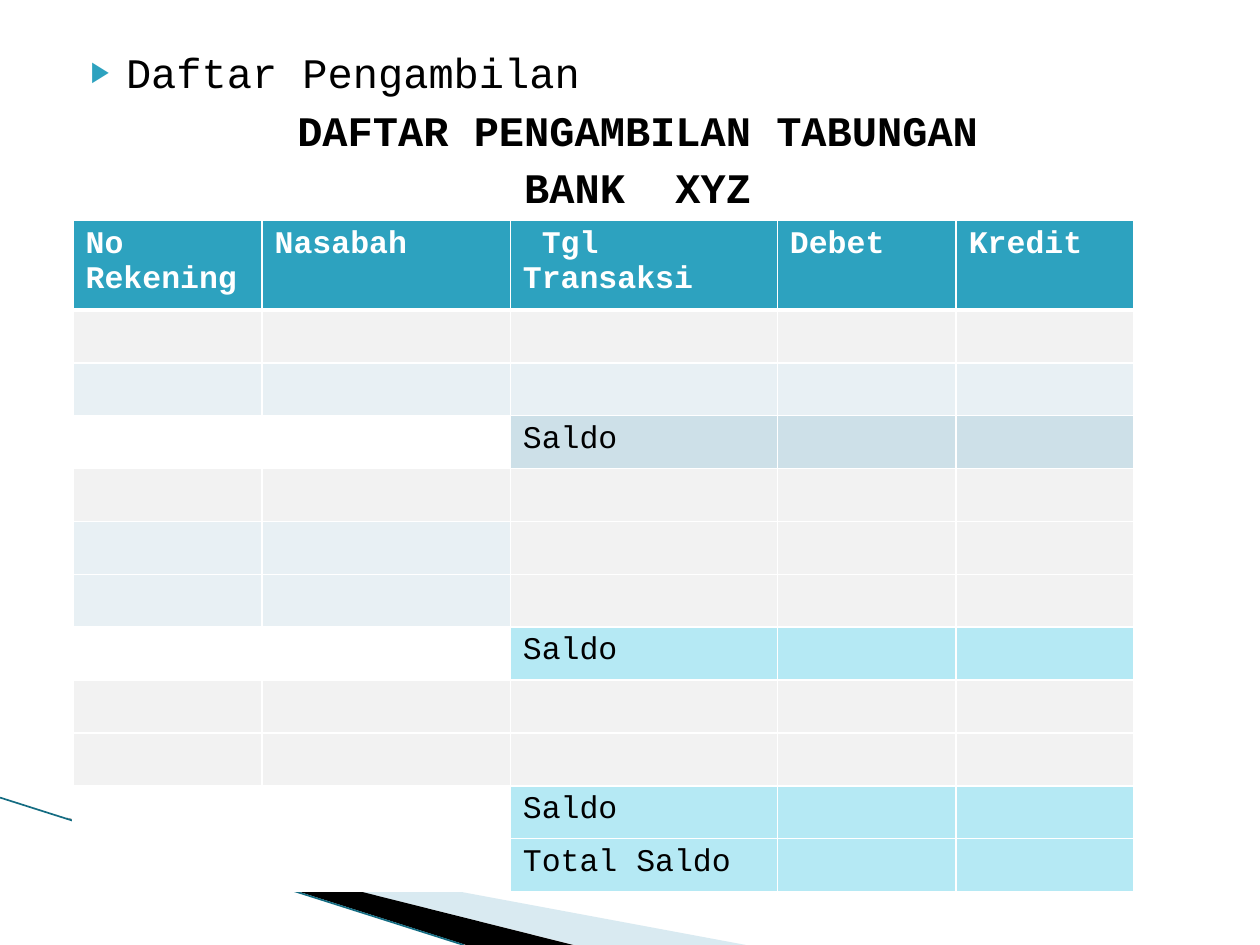
from dataclasses import dataclass

from lxml.etree import SubElement
from pptx import Presentation
from pptx.dml.color import RGBColor
from pptx.enum.text import MSO_ANCHOR, PP_ALIGN
from pptx.oxml.ns import qn
from pptx.util import Inches, Pt


@dataclass(frozen=True)
class Theme:
    font: str = "Courier New"
    heading_size: float = 24
    table_size: float = 18
    accent: str = "2DA2BF"
    text: str = "000000"
    white: str = "FFFFFF"
    plain: str = "F2F2F2"
    pale: str = "E8F0F4"
    first_balance: str = "CDE0E8"
    balance: str = "B5E9F4"
    swoosh: str = "A0CBDC"
    edge: str = "146C82"


theme = Theme()


def style_text(paragraph, size, color, bold=False):
    for run in paragraph.runs:
        run.font.name = theme.font
        run.font.size = Pt(size)
        run.font.bold = bold
        run.font.color.rgb = RGBColor.from_string(color)


def add_border(cell, side, points):
    border = SubElement(cell._tc.get_or_add_tcPr(), qn(f"a:ln{side}"), w=str(Pt(points)))
    SubElement(SubElement(border, qn("a:solidFill")), qn("a:srgbClr"), val=theme.white)


deck = Presentation()
deck.slide_width, deck.slide_height = Inches(10), Inches(7.5)
slide = deck.slides.add_slide(deck.slide_layouts[1])
title, heading = slide.placeholders
title.element.getparent().remove(title.element)

# Corner decoration: pale wedge, black wedge, thin edge
wedges = [
    (theme.swoosh, 40, [(0.55, 6.5), (5.92, 7.5), (4.56, 7.5)]),
    (theme.text, 100, [(0.53, 6.49), (4.55, 7.5), (3.7, 7.5)]),
]
for color, opacity, corners in wedges:
    points = [(Inches(x), Inches(y)) for x, y in corners]
    builder = slide.shapes.build_freeform(*points[0])
    builder.add_line_segments(points[1:], close=True)
    wedge = builder.convert_to_shape()
    wedge.shadow.inherit = False
    wedge.line.fill.background()
    wedge.fill.solid()
    wedge.fill.fore_color.rgb = RGBColor.from_string(color)
    if opacity < 100:
        tint = wedge.element.spPr.find(f".//{qn('a:srgbClr')}")
        SubElement(tint, qn("a:alpha"), val=str(opacity * 1000))

edge = slide.shapes.add_connector(1, 0, Inches(6.33), Inches(3.68), deck.slide_height)
edge.line.color.rgb = RGBColor.from_string(theme.edge)
edge.line.width = Pt(0.95)
SubElement(edge.element.spPr, qn("a:effectLst"))

# Heading: one bullet, then a centred two-line title that ends above the table
edge.element.addnext(heading.element)
heading.left, heading.top = Inches(0.5), Inches(0.33)
heading.width, heading.height = Inches(9), Inches(6.24)
heading_frame = heading.text_frame
heading_frame.vertical_anchor = MSO_ANCHOR.TOP
heading_frame.margin_top = Inches(0.04)
heading_frame.text = "Daftar Pengambilan\nDAFTAR PENGAMBILAN TABUNGAN\nBANK  XYZ"
for number, paragraph in enumerate(heading_frame.paragraphs):
    is_bullet = number == 0
    properties = paragraph._p.get_or_add_pPr()
    properties.set("marL", str(Inches(0.4 if is_bullet else 0.12)))
    properties.set("indent", str(Inches(-0.28 if is_bullet else 0)))
    paragraph.space_before = Pt(0 if is_bullet else 4)
    if is_bullet:
        SubElement(SubElement(properties, qn("a:buClr")), qn("a:srgbClr"), val=theme.accent)
        SubElement(properties, qn("a:buSzPct"), val="68000")
        SubElement(properties, qn("a:buChar"), char="▶")
    else:
        SubElement(properties, qn("a:buNone"))
        paragraph.alignment = PP_ALIGN.CENTER
    style_text(paragraph, theme.heading_size, theme.text, bold=not is_bullet)

# Withdrawal table: each row has a left fill (2 columns), a right fill (3) and a label
headers = ["No Rekening", "Nasabah", " Tgl Transaksi", "Debet", "Kredit"]
column_widths = [1.5, 1.97, 2.12, 1.42, 1.41]
header_height, row_height = 0.71, 0.42
split = 2
body_rows = [
    (theme.plain, theme.plain, ""),
    (theme.pale, theme.pale, ""),
    (theme.white, theme.first_balance, "Saldo"),
    (theme.plain, theme.plain, ""),
    (theme.pale, theme.plain, ""),
    (theme.pale, theme.plain, ""),
    (theme.white, theme.balance, "Saldo"),
    (theme.plain, theme.plain, ""),
    (theme.plain, theme.plain, ""),
    (theme.white, theme.balance, "Saldo"),
    (theme.white, theme.balance, "Total Saldo"),
]
ledger = slide.shapes.add_table(
    len(body_rows) + 1, len(headers), Inches(0.58), Inches(1.75),
    Inches(sum(column_widths)), Inches(header_height + row_height * len(body_rows)),
).table
for column, width in zip(ledger.columns, column_widths):
    column.width = Inches(width)

for r, row in enumerate(ledger.rows):
    row.height = Inches(row_height if r else header_height)
    for c, cell in enumerate(row.cells):
        if r == 0:
            fill, label, color = theme.accent, headers[c], theme.white
        else:
            left_fill, right_fill, row_label = body_rows[r - 1]
            fill = left_fill if c < split else right_fill
            label = row_label if c == split else ""
            color = theme.text
        for side in "LRTB":
            at_header_rule = (r, side) in [(0, "B"), (1, "T")]
            add_border(cell, side, 3 if at_header_rule else 1)
        cell.fill.solid()
        cell.fill.fore_color.rgb = RGBColor.from_string(fill)
        if label:
            cell.text_frame.text = label
            style_text(cell.text_frame.paragraphs[0], theme.table_size, color, bold=r == 0)

deck.save("out.pptx")
